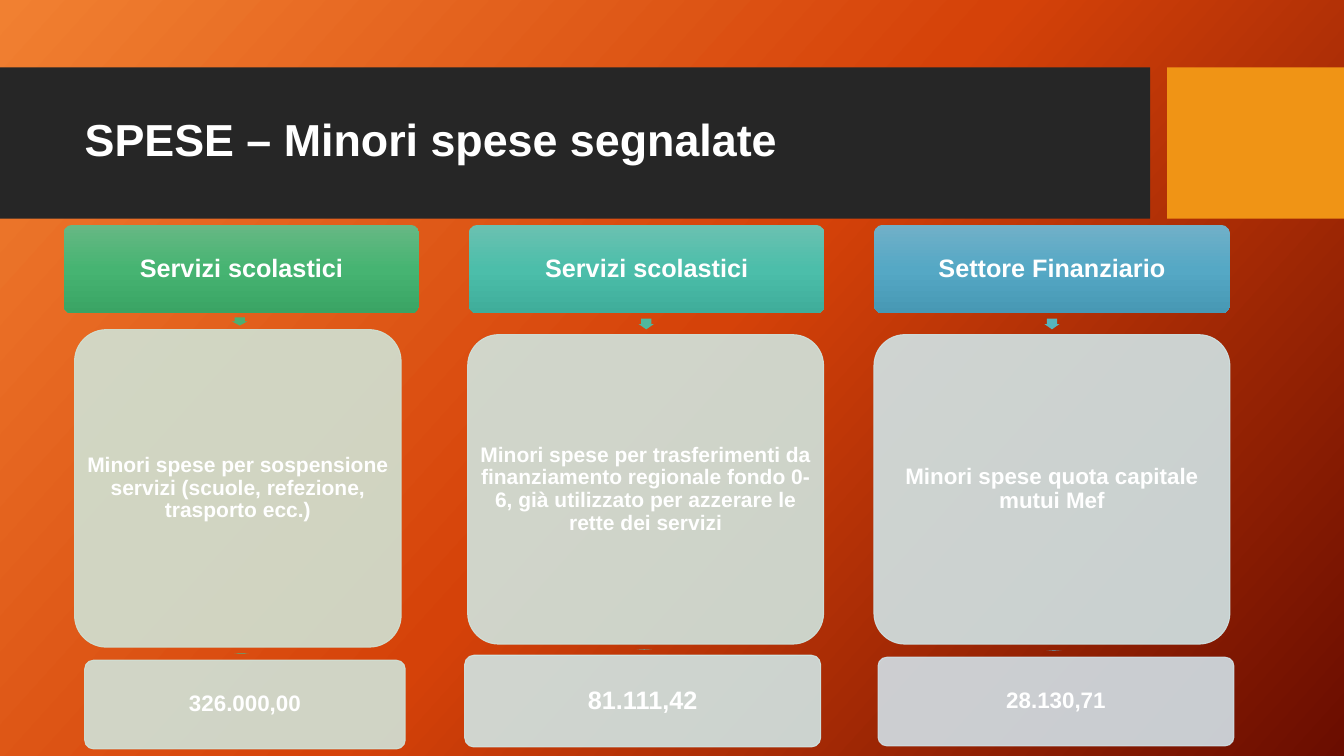
from lxml.etree import SubElement
from pptx import Presentation
from pptx.dml.color import RGBColor
from pptx.enum.shapes import MSO_SHAPE
from pptx.enum.text import MSO_ANCHOR, MSO_AUTO_SIZE, PP_ALIGN
from pptx.oxml.ns import qn
from pptx.util import Inches, Pt

COLORS = {"band": "262626", "accent": "F09415", "text": "FFFFFF"}
BACKGROUND = ("F18031", "D54209", "6A0D00")
HEADER_LEFT, HEADER_TOP, HEADER_PITCH = 4.73, 29.73, 30.15
COLUMN_WIDTH, ROW_HEIGHT = 26.48, 11.73

# Each column: gradient and colours, then (text, size, frame) for detail and amount
COLUMNS = [
    {"header": "Servizi scolastici", "gradient": ("67B884", "46B472", "3AA464"),
     "arrows": ("4BAF73", "4CB488"), "panels": ("D0E3D5", "D0E4DA"),
     "detail": ("Minori spese per sospensione servizi (scuole, refezione, trasporto ecc.)",
                15, (5.55, 43.6, 24.3, 42)),
     "amount": ("326.000,00", 16, (6.3, 87.33, 23.85, ROW_HEIGHT))},
    {"header": "Servizi scolastici", "gradient": ("6BC1B1", "4CBEAA", "3FAD9A"),
     "arrows": ("50B79C", "53BAB1"), "panels": ("D0E5DF", "D1E6E5"),
     "detail": ("Minori spese per trasferimenti da finanziamento regionale fondo 0-6, "
                "già utilizzato per azzerare le rette dei servizi",
                15, (34.8, 44.27, COLUMN_WIDTH, 40.93)),
     "amount": ("81.111,42", 18, (34.58, 86.67, COLUMN_WIDTH, 12.13))},
    {"header": "Settore Finanziario", "gradient": ("71B0C8", "55A8C5", "4798B4"),
     "arrows": ("56B5BD", "5AA6C0"), "panels": ("D1E5E7", "D2E1E8"),
     "detail": ("Minori spese quota capitale mutui Mef",
                16, (65.03, 44.27, COLUMN_WIDTH, 40.93)),
     "amount": ("28.130,71", 16, (65.33, 86.93, COLUMN_WIDTH, ROW_HEIGHT))},
]


def write_text(shape, text, size=18, align=PP_ALIGN.CENTER, inset=None):
    frame = shape.text_frame
    frame.word_wrap = True
    frame.auto_size = MSO_AUTO_SIZE.NONE
    frame.vertical_anchor = MSO_ANCHOR.MIDDLE
    if inset is not None:
        frame.margin_left = frame.margin_right = Inches(inset)
        frame.margin_top = frame.margin_bottom = Inches(inset)
    paragraph = frame.paragraphs[0]
    paragraph.alignment = align
    paragraph.line_spacing = 0.9
    run = paragraph.add_run()
    run.text = text
    run.font.name = "Arial"
    run.font.size = Pt(size)
    run.font.bold = True
    run.font.color.rgb = RGBColor.from_string(COLORS["text"])


def set_gradient(fill, element, colors, angle):
    fill.gradient()
    fill.gradient_angle = 360 - angle
    stops = element.find(".//" + qn("a:gsLst"))
    for stop in list(stops):
        stops.remove(stop)
    for index, color in enumerate(colors):
        stop = SubElement(stops, qn("a:gs"), pos=str(index * 50000))
        SubElement(stop, qn("a:srgbClr"), val=color)


class SlideBuilder:
    """Places elements by percentages of the slide's width and height."""

    def __init__(self, presentation):
        self.width = presentation.slide_width
        self.height = presentation.slide_height
        self.slide = presentation.slides.add_slide(presentation.slide_layouts[5])

    def frame(self, left, top, width, height):
        return (round(left * self.width / 100), round(top * self.height / 100),
                round(width * self.width / 100), round(height * self.height / 100))

    def background(self, colors, angle):
        set_gradient(self.slide.background.fill, self.slide.element, colors, angle)

    def block(self, kind, frame, color=None):
        shape = self.slide.shapes.add_shape(kind, *self.frame(*frame))
        shape.shadow.inherit = False
        shape.line.fill.background()
        if color:
            shape.fill.solid()
            shape.fill.fore_color.rgb = RGBColor.from_string(color)
        return shape

    def title(self, text, frame, behind):
        title = self.slide.shapes.title
        title.left, title.top, title.width, title.height = self.frame(*frame)
        behind.element.addnext(title.element)
        write_text(title, text, size=32, align=PP_ALIGN.LEFT)

    def header(self, text, frame, gradient):
        shape = self.block(MSO_SHAPE.ROUNDED_RECTANGLE, frame)
        shape.adjustments[0] = 0.1
        set_gradient(shape.fill, shape.element, gradient, 90)
        write_text(shape, text, inset=0.03)
        return shape

    def panel(self, text, size, frame, color, inset):
        shape = self.block(MSO_SHAPE.ROUNDED_RECTANGLE, frame, color)
        shape.adjustments[0] = 0.1
        shape.line.color.rgb = RGBColor.from_string(color)
        shape.line.width = Pt(0.75)
        for fill_color in shape.element.spPr.iter(qn("a:srgbClr")):
            SubElement(fill_color, qn("a:alpha"), val="90000")
        write_text(shape, text, size=size, inset=inset)
        return shape

    def arrow(self, upper, lower, color, length_share):
        """Points down from the middle of the gap between two boxes."""
        gap = lower.top - upper.top - upper.height
        center_x = (upper.left + upper.width / 2 + lower.left + lower.width / 2) / 2
        center_y = lower.top - gap / 2
        shape = self.block(MSO_SHAPE.RIGHT_ARROW, (0, 0, 1, 1), color)
        shape.width, shape.height = round(gap * length_share), Inches(0.15)
        shape.left = round(center_x - shape.width / 2)
        shape.top = round(center_y - shape.height / 2)
        shape.rotation = 90
        shape.adjustments[0], shape.adjustments[1] = 0.667, 0.5


def main():
    presentation = Presentation()
    presentation.slide_width, presentation.slide_height = Inches(13.33), Inches(7.5)
    builder = SlideBuilder(presentation)
    builder.background(BACKGROUND, 42)

    # Title band
    band = builder.block(MSO_SHAPE.RECTANGLE, (0, 8.93, 85.58, 20), COLORS["band"])
    builder.block(MSO_SHAPE.RECTANGLE, (86.85, 8.93, 13.15, 20), COLORS["accent"])
    builder.title("SPESE – Minori spese segnalate", (5.55, 10.93, 78.83, 15.73), band)

    # Three columns: header, detail, amount
    for index, column in enumerate(COLUMNS):
        left = HEADER_LEFT + index * HEADER_PITCH
        header = builder.header(column["header"],
                                (left, HEADER_TOP, COLUMN_WIDTH, ROW_HEIGHT),
                                column["gradient"])
        detail = builder.panel(*column["detail"], column["panels"][0], inset=0.02)
        amount = builder.panel(*column["amount"], column["panels"][1], inset=0.03)
        builder.arrow(header, detail, column["arrows"][0], length_share=0.5)
        builder.arrow(detail, amount, column["arrows"][1], length_share=0.03)

    presentation.save("out.pptx")


if __name__ == "__main__":
    main()
